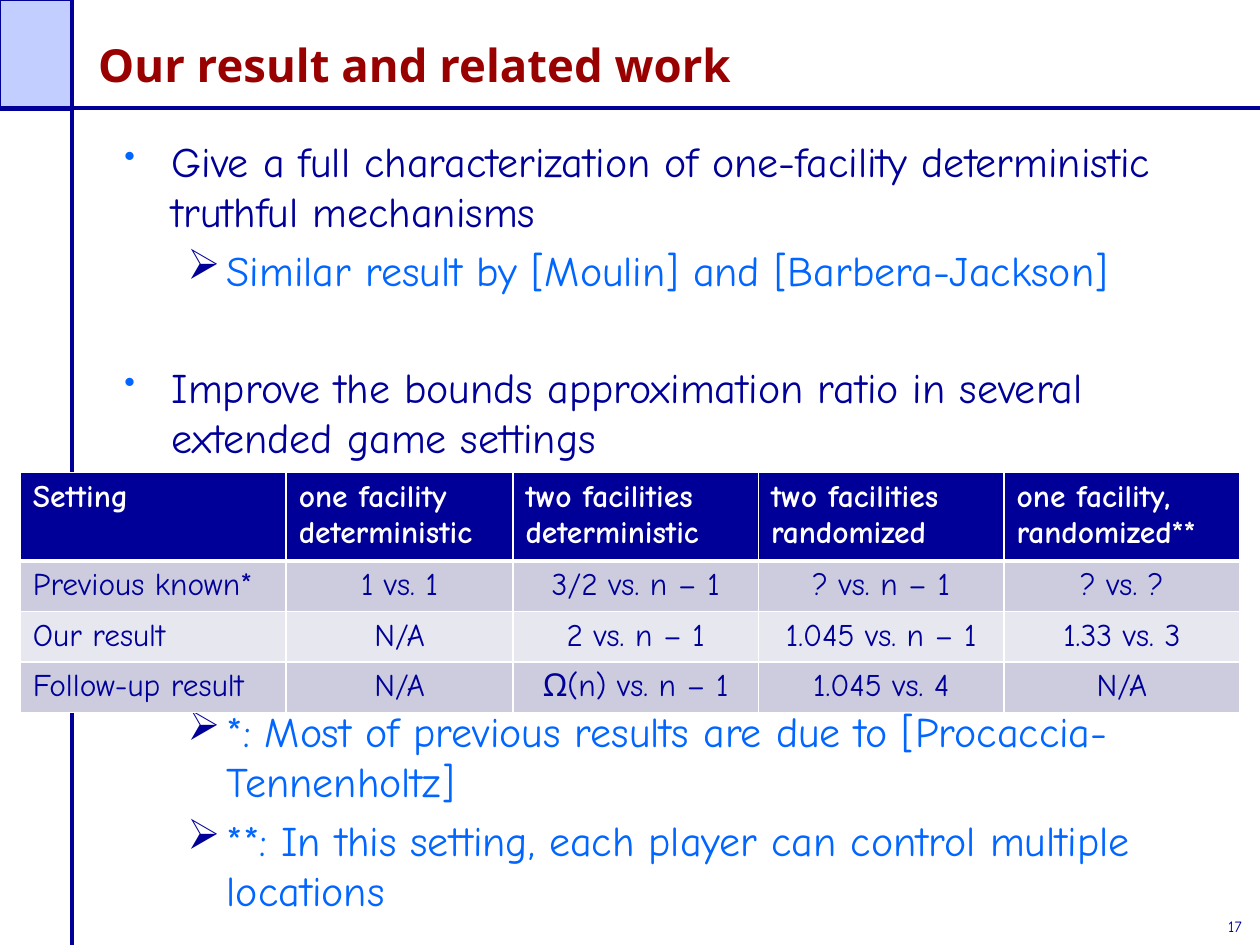
from lxml import etree
from pptx import Presentation
from pptx.dml.color import RGBColor
from pptx.enum.shapes import MSO_CONNECTOR, MSO_SHAPE
from pptx.enum.text import MSO_ANCHOR, PP_ALIGN
from pptx.oxml.ns import qn
from pptx.util import Cm, Pt

RECT = MSO_SHAPE.RECTANGLE
LINE = MSO_CONNECTOR.STRAIGHT
BOTTOM = MSO_ANCHOR.BOTTOM
LEFT, CENTER = PP_ALIGN.LEFT, PP_ALIGN.CENTER

NAVY = RGBColor(0x00, 0x00, 0x99)
BLUE = RGBColor(0x00, 0x66, 0xFF)
PALE = RGBColor(0xC1, 0xCE, 0xFF)
RED = RGBColor(0x99, 0x00, 0x00)
WHITE = RGBColor(0xFF, 0xFF, 0xFF)
DARK = RGBColor(0xCC, 0xCC, 0xDE)
LIGHT = RGBColor(0xE7, 0xE7, 0xEF)
HAND, SANS = "Comic Neue", "Noto Sans"


def style(para, face, size, color, bold=False):
    font = para.font
    font.name, font.size, font.bold = face, Pt(size), bold
    font.color.rgb = color
    for run in para.runs:
        run.font.name, run.font.size, run.font.bold = face, Pt(size), bold
        run.font.color.rgb = color


def add_sub(parent, tag, **attrs):
    return etree.SubElement(parent, qn(tag), attrs)


prs = Presentation()
prs.slide_width, prs.slide_height = Cm(25.4), Cm(19.05)
slide = prs.slides.add_slide(prs.slide_layouts[6])
shapes = slide.shapes

# Corner block
block = shapes.add_shape(RECT, 0, 0, Cm(1.45), Cm(2.23))
block.shadow.inherit = False
block.fill.solid()
block.fill.fore_color.rgb = PALE
block.line.color.rgb = NAVY
block.line.width = Pt(1)

# Slide number
box = shapes.add_textbox(Cm(24.51), Cm(18.36), Cm(0.86), Cm(0.64))
box.text_frame.word_wrap = False
box.text_frame.text = "17"
style(box.text_frame.paragraphs[0], HAND, 9, NAVY)

# Crossing rules
for ends in ((0, 2.18, 25.4, 2.18), (1.45, 0, 1.45, 19.05)):
    rule = shapes.add_connector(LINE, *[Cm(v) for v in ends])
    rule.line.color.rgb = NAVY
    rule.line.width = Pt(2.25)
    add_sub(rule._element.spPr, "a:effectLst")

# Title
box = shapes.add_textbox(Cm(1.73), Cm(0.3), Cm(22.1), Cm(1.68))
frame = box.text_frame
frame.word_wrap = True
frame.vertical_anchor = BOTTOM
frame.text = "Our result and related work"
style(frame.paragraphs[0], SANS, 26, RED, True)

# Bullets: level, space before in points, text
items = [
    (0, 0, "Give a full characterization of one-facility deterministic truthful mechanisms"),
    (1, 4.8, "Similar result by [Moulin] and [Barbera-Jackson]"),
    (0, 38, "Improve the bounds approximation ratio in several extended game settings"),
    (1, 139, "*: Most of previous results are due to [Procaccia-Tennenholtz]"),
    (1, 4.8, "**: In this setting, each player can control multiple locations"),
]
# Per level: left margin, hang, mark, mark colour, mark size, text colour
levels = [
    (0.95, 0.95, "•", BLUE, 75, NAVY),
    (2.06, 0.79, "➢", NAVY, 100, BLUE),
]
box = shapes.add_textbox(Cm(2.26), Cm(2.6), Cm(22.35), Cm(15.88))
frame = box.text_frame
frame.word_wrap = True
for i, (level, gap, text) in enumerate(items):
    para = frame.add_paragraph() if i else frame.paragraphs[0]
    margin, hang, mark, tint, scale, color = levels[level]
    para.text = text
    para.level = level
    para.space_before = Pt(gap)
    props = para._p.get_or_add_pPr()
    props.set("marL", str(Cm(margin)))
    props.set("indent", str(-Cm(hang)))
    add_sub(add_sub(props, "a:buClr"), "a:srgbClr", val=str(tint))
    add_sub(props, "a:buSzPct", val=str(scale * 1000))
    add_sub(props, "a:buChar", char=mark)
    style(para, HAND, 24, color)

# Table of bounds
rows = [
    ["Setting", "one facility deterministic", "two facilities deterministic",
     "two facilities randomized", "one facility, randomized**"],
    ["Previous known*", "1 vs. 1", "3/2 vs. n – 1", "? vs. n – 1", "? vs. ?"],
    ["Our result", "N/A", "2 vs. n – 1", "1.045 vs. n – 1", "1.33 vs. 3"],
    ["Follow-up result", "N/A", "Ω(n) vs. n – 1", "1.045 vs. 4", "N/A"],
]
fills = [NAVY, DARK, LIGHT, DARK]
widths = [5.36, 4.57, 4.95, 4.95, 4.75]
heights = [1.42, 0.81, 0.81, 0.81]
table = shapes.add_table(len(rows), len(widths), Cm(0.41), Cm(9.53),
                         Cm(sum(widths)), Cm(sum(heights))).table
for col, width in zip(table.columns, widths):
    col.width = Cm(width)
for row, height in zip(table.rows, heights):
    row.height = Cm(height)
for r, row in enumerate(rows):
    for c, text in enumerate(row):
        cell = table.cell(r, c)
        cell.text = text
        para = cell.text_frame.paragraphs[0]
        para.alignment = CENTER if r and c else LEFT
        style(para, HAND, 18, NAVY if r else WHITE, r == 0)
        # Borders come before the fill in the cell properties
        props = cell._tc.get_or_add_tcPr()
        for side in "LRTB":
            thick = (r, side) in ((0, "B"), (1, "T"))
            edge = add_sub(props, "a:ln" + side, w=str(Pt(3 if thick else 1)))
            add_sub(add_sub(edge, "a:solidFill"), "a:srgbClr", val=str(WHITE))
        cell.fill.solid()
        cell.fill.fore_color.rgb = fills[r]

prs.save("out.pptx")
